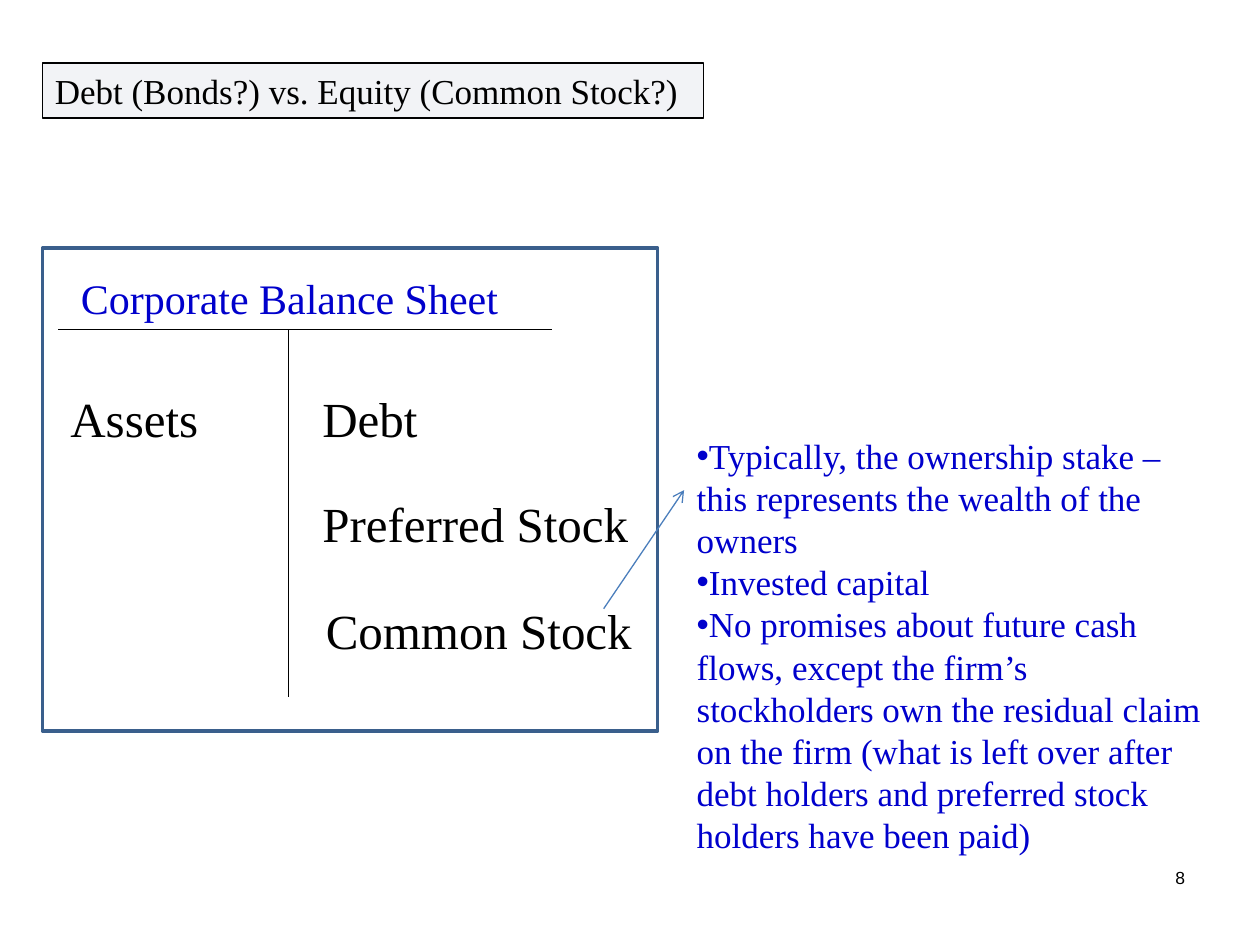
from lxml import etree
from pptx import Presentation
from pptx import util as u
from pptx.dml.color import RGBColor
from pptx.enum import shapes, text
from pptx.oxml.ns import qn

BLACK, BLUE = "000000", "0000CC"
SERIF = "Times New Roman"


def rgb(value):
    return RGBColor.from_string(value)


def add_xml(parent, tag, **attrs):
    return etree.SubElement(parent, qn(tag), attrs)


def write(p, words, size=28, color=BLACK, font=SERIF, align=text.PP_ALIGN.LEFT):
    p.alignment = align
    p.space_before = u.Pt(0)
    r = p.add_run()
    r.text = words
    r.font.size, r.font.name = u.Pt(size), font
    r.font.color.rgb = rgb(color)


class SlideBuilder:
    def __init__(self, prs):
        self.s = prs.slides.add_slide(prs.slide_layouts[1])
        self.bullet = "•"

    def place(self, sp, left, top, width, height):
        sp.left, sp.top = u.Cm(left), u.Cm(top)
        sp.width, sp.height = u.Cm(width), u.Cm(height)

    def frame(self, sp):
        tf = sp.text_frame
        tf.word_wrap = True
        tf.auto_size = text.MSO_AUTO_SIZE.NONE
        tf.vertical_anchor = text.MSO_ANCHOR.TOP
        return tf

    def title(self, words, box, fill, opacity):
        sp = self.s.shapes.title
        self.place(sp, *box)
        sp.fill.solid()
        sp.fill.fore_color.rgb = rgb(fill)
        color = sp.fill._xPr.find(qn("a:solidFill"))[0]
        add_xml(color, "a:alpha", val=str(opacity * 1000))
        sp.line.color.rgb, sp.line.width = rgb(BLACK), u.Pt(0.75)
        write(self.frame(sp).paragraphs[0], words, size=20)

    def bullets(self, items, box):
        sp = self.s.placeholders[1]
        self.place(sp, *box)
        tf = self.frame(sp)
        for i, item in enumerate(items):
            p = tf.add_paragraph() if i else tf.paragraphs[0]
            write(p, item, size=20, color=BLUE)
            pPr = p._p.get_or_add_pPr()
            pPr.set("marL", "0")
            pPr.set("indent", "0")
            add_xml(pPr, "a:buFont", typeface="Arial")
            add_xml(pPr, "a:buChar", char=self.bullet)

    def label(self, words, box, **style):
        sp = self.s.shapes.add_textbox(*(u.Cm(v) for v in box))
        write(self.frame(sp).paragraphs[0], words, **style)

    def outline(self, box, color, width):
        sp = self.s.shapes.add_shape(
            shapes.MSO_SHAPE.RECTANGLE, *(u.Cm(v) for v in box))
        sp.shadow.inherit = False
        sp.fill.background()
        sp.line.color.rgb, sp.line.width = rgb(color), u.Pt(width)

    def line(self, ends, color=BLACK, arrow=False):
        cx = self.s.shapes.add_connector(
            shapes.MSO_CONNECTOR.STRAIGHT, *(u.Cm(v) for v in ends))
        cx.line.color.rgb, cx.line.width = rgb(color), u.Pt(0.75)
        if arrow:
            add_xml(cx.line._get_or_add_ln(), "a:tailEnd", type="arrow")
        add_xml(cx._element.spPr, "a:effectLst")


def main():
    prs = Presentation()
    prs.slide_width, prs.slide_height = u.Cm(25.4), u.Cm(19.05)
    slide = SlideBuilder(prs)

    slide.title("Debt (Bonds?) vs. Equity (Common Stock?)",
                (0.85, 1.27, 13.33, 1.11), fill="002060", opacity=5)
    slide.bullets([
        "Typically, the ownership stake – this represents the wealth of the owners",
        "Invested capital",
        "No promises about future cash flows, except the firm’s stockholders own "
        "the residual claim on the firm (what is left over after debt holders "
        "and preferred stock holders have been paid)",
    ], (13.79, 8.64, 10.8, 8.81))

    # T-account
    rule_y, stem_x = 6.64, 5.82
    slide.line((1.17, rule_y, 11.13, rule_y))
    slide.line((stem_x, rule_y, stem_x, 14.05))
    slide.label("Corporate Balance Sheet", (1.38, 5.36, 9.74, 1.29),
                size=24, color=BLUE)
    for words, left, top in [
        ("Assets", 1.17, 7.7),
        ("Debt", 6.25, 7.7),
        ("Preferred Stock", 6.25, 9.82),
        ("Common Stock", 6.32, 11.99),
    ]:
        slide.label(words, (left, top, 6.8, 1.45))
    slide.outline((0.86, 5, 12.4, 9.74), color="3A5F8C", width=2)
    slide.line((12.17, 12.27, 13.79, 9.88), color="4B7EBC", arrow=True)

    slide.label("8", (18.85, 17.35, 5.29, 1.27), size=10, font="Arial",
                align=text.PP_ALIGN.RIGHT)
    prs.save("out.pptx")


if __name__ == "__main__":
    main()
